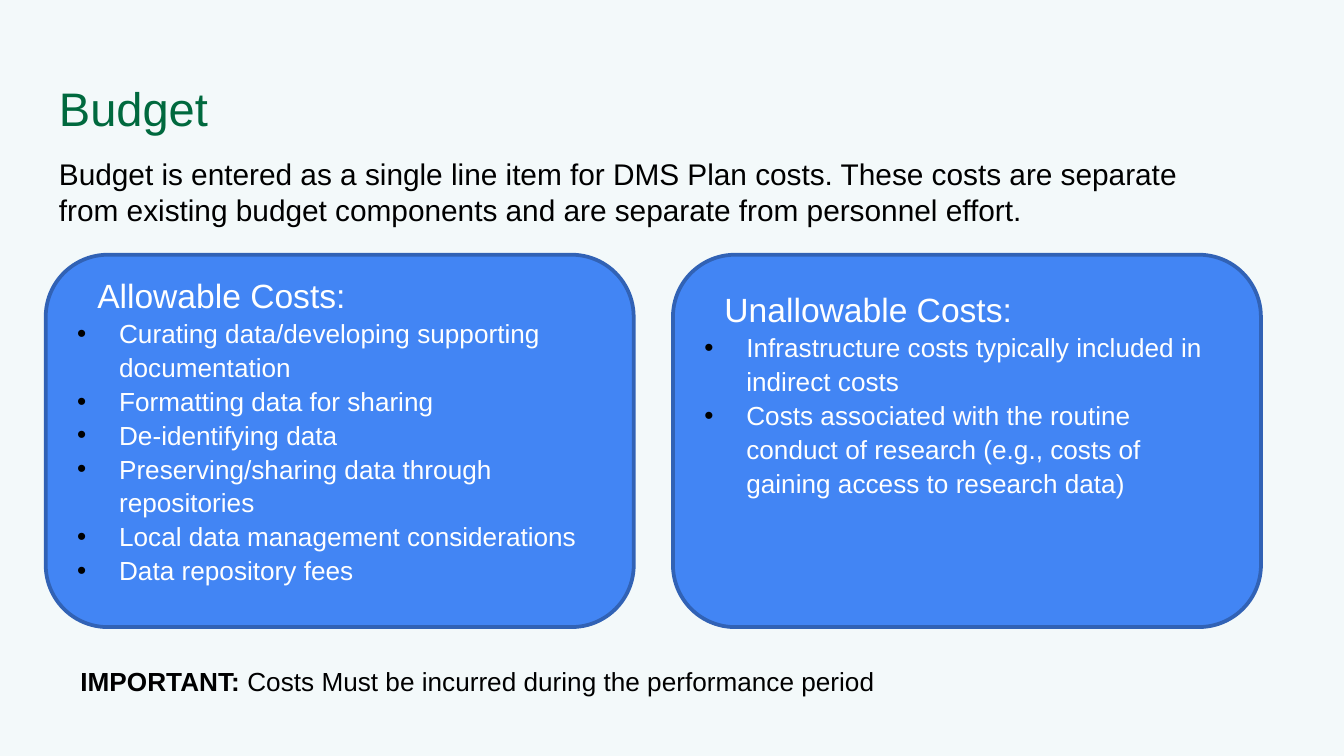
from dataclasses import dataclass

from lxml.etree import SubElement
from pptx import Presentation
from pptx.dml.color import RGBColor as RGB
from pptx.enum.shapes import MSO_SHAPE as Shape
from pptx.enum.text import MSO_ANCHOR as Anchor, PP_ALIGN as Align
from pptx.oxml.ns import qn
from pptx.util import Pt


@dataclass(frozen=True)
class Theme:
    """Colours, font and type sizes of the slide."""
    font: str = "Arial"
    back: str = "F3F9FA"
    green: str = "00693E"
    ink: str = "000000"
    white: str = "FFFFFF"
    blue: str = "4285F4"
    edge: str = "3162B5"
    title: float = 25.2
    lead: float = 16
    head: float = 18
    body: float = 14


THEME = Theme()


def rgb(code):
    """Turn a hex code into a colour."""
    return RGB.from_string(code)


def write(para, text, size=THEME.body, color=THEME.ink, bold=False):
    """Add a run of formatted text to a paragraph."""
    run = para.add_run()
    run.text = text
    font = run.font
    font.name, font.size, font.bold = THEME.font, Pt(size), bold
    font.color.rgb = rgb(color)


def indent(para, left, hang=0, bullet=False):
    """Set the paragraph indents and an optional black bullet."""
    props = para._p.get_or_add_pPr()
    props.set("marL", str(Pt(left)))
    props.set("indent", str(Pt(-hang)))
    if bullet:
        tint = SubElement(props, qn("a:buClr"))
        SubElement(tint, qn("a:srgbClr")).set("val", THEME.ink)
        SubElement(props, qn("a:buFont")).set("typeface", THEME.font)
        SubElement(props, qn("a:buChar")).set("char", "•")


def label(slide, box, runs, inset=3.6):
    """Place a wrapped text box holding one paragraph of runs."""
    frame = slide.shapes.add_textbox(*map(Pt, box)).text_frame
    frame.word_wrap = True
    frame.margin_top = frame.margin_bottom = Pt(inset)
    for text, style in runs:
        write(frame.paragraphs[0], text, **style)


def card(slide, box, head, items, inset):
    """Place a rounded card with a heading and a bullet list."""
    shape = slide.shapes.add_shape(Shape.ROUNDED_RECTANGLE, *map(Pt, box))
    shape.shadow.inherit = False
    shape.fill.solid()
    shape.fill.fore_color.rgb = rgb(THEME.blue)
    shape.line.color.rgb = rgb(THEME.edge)
    shape.line.width = Pt(2)
    frame = shape.text_frame
    frame.word_wrap = True
    frame.vertical_anchor = Anchor.TOP
    frame.margin_top = Pt(inset)
    top = frame.paragraphs[0]
    top.alignment = Align.LEFT
    indent(top, 10.8)
    write(top, head, size=THEME.head, color=THEME.white)
    for item in items:
        para = frame.add_paragraph()
        para.alignment = Align.LEFT
        para.line_spacing = 1.08
        indent(para, 22.5, hang=22.5, bullet=True)
        write(para, item, color=THEME.white)


def cards(slide, box):
    """Place the two cost cards side by side in the box."""
    left, top, width, height = box
    gap = 21
    wide = (width - gap) / 2
    lists = [
        ("Allowable Costs:", 1, [
            "Curating data/developing supporting documentation",
            "Formatting data for sharing",
            "De-identifying data",
            "Preserving/sharing data through repositories",
            "Local data management considerations",
            "Data repository fees",
        ]),
        ("Unallowable Costs:", 8.5, [
            "Infrastructure costs typically included in indirect costs",
            "Costs associated with the routine conduct of research "
            "(e.g., costs of gaining access to research data)",
        ]),
    ]
    for i, (head, inset, items) in enumerate(lists):
        spot = (left + i * (wide + gap), top, wide, height)
        card(slide, spot, head, items, inset)


def main():
    """Build the budget slide and save it."""
    deck = Presentation()
    deck.slide_width, deck.slide_height = Pt(720), Pt(405)
    slide = deck.slides.add_slide(deck.slide_layouts[6])
    slide.background.fill.solid()
    slide.background.fill.fore_color.rgb = rgb(THEME.back)
    label(slide, (24.5, 35.3, 671, 45.4), [
        ("Budget", dict(size=THEME.title, color=THEME.green))], inset=7.2)
    label(slide, (24.5, 80, 630, 46), [
        ("Budget is entered as a single line item for DMS Plan costs. "
         "These costs are separate from existing budget components and "
         "are separate from personnel effort.", dict(size=THEME.lead))])
    cards(slide, (24.5, 136.5, 651, 199.5))
    label(slide, (36, 353, 630, 42.5), [
        ("IMPORTANT: ", dict(bold=True)),
        ("Costs Must be incurred during the performance period", {})])
    deck.save("out.pptx")


if __name__ == "__main__":
    main()
